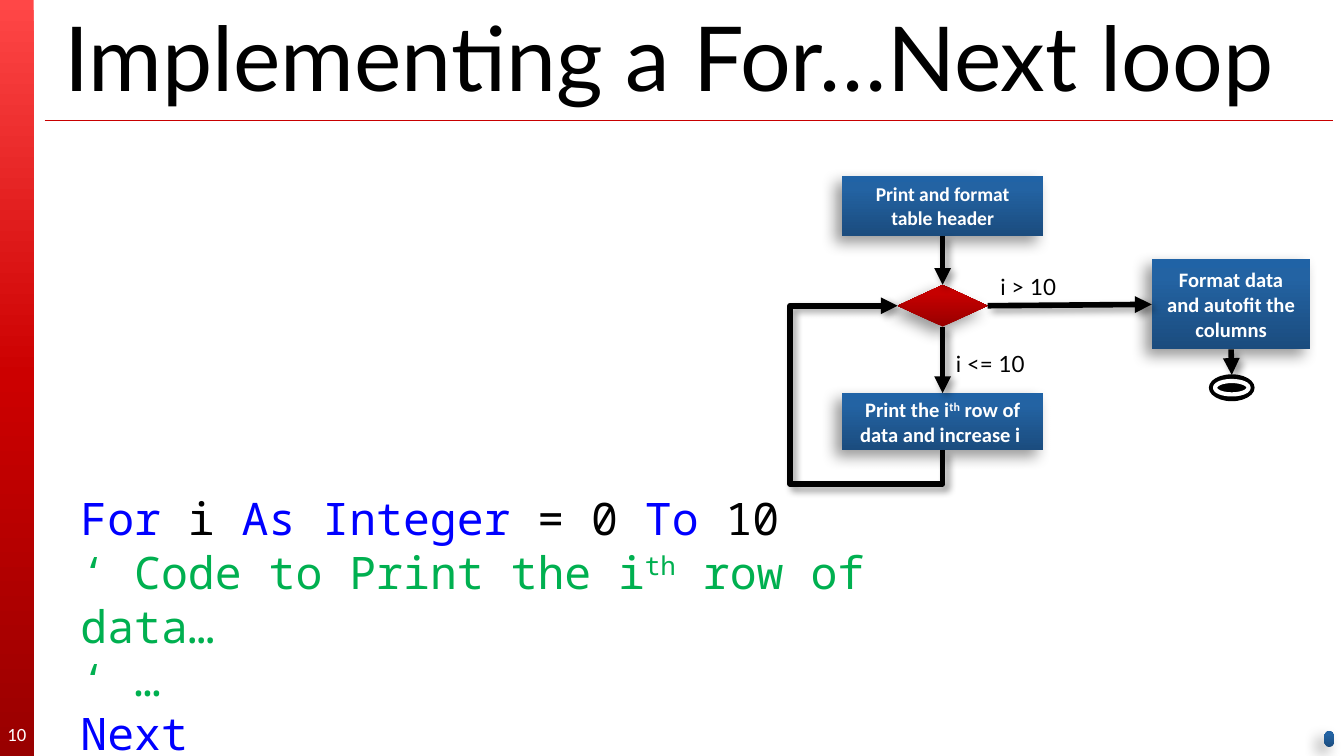
from copy import deepcopy
from lxml.etree import SubElement
from pptx import Presentation
from pptx.dml.color import RGBColor as RGB
from pptx.enum.shapes import MSO_CONNECTOR as LINK, MSO_SHAPE as KIND
from pptx.enum.text import MSO_ANCHOR as ANCHOR, PP_ALIGN as ALIGN
from pptx.oxml.ns import qn
from pptx.util import Inches, Pt

# Grid: 100 columns, 56.25 rows, one tenth of an inch each
UNIT = Inches(0.1)
COLORS = {"black": "000000", "white": "FFFFFF", "rule": "C80000",
          "key": "0000FF", "note": "00B050"}
RAMPS = {"bar": ((0, "FF4747"), (50, "CC0000"), (100, "990000")),
         "blue": ((0, "1B4C7E"), (80, "2363A3"), (100, "2063A6")),
         "red": ((0, "980000"), (80, "C60000"), (100, "C70000"))}
tint = {name: RGB.from_string(code) for name, code in COLORS.items()}

deck = Presentation()
deck.slide_width, deck.slide_height = int(100 * UNIT), int(56.25 * UNIT)
slide = deck.slides.add_slide(deck.slide_layouts[6])
shapes = slide.shapes


def draw(kind, box, ramp=None, angle=90, cast=True):
    """Add a borderless shape, with a gradient and a soft shadow if asked."""
    shape = shapes.add_shape(kind, *(int(n * UNIT) for n in box))
    shape.shadow.inherit = False
    shape.line.fill.background()
    if ramp:
        shape.fill.gradient()
        shape.fill.gradient_angle = angle
        stops = shape._element.spPr.find(".//" + qn("a:gsLst"))
        stops.append(deepcopy(stops[-1]))
        for stop, (place, code) in zip(shape.fill.gradient_stops, RAMPS[ramp]):
            stop.position = place / 100
            stop.color.rgb = RGB.from_string(code)
        if cast:
            shade(shape, 8, 5, 135)
    return shape


def shade(shape, blur, dist, angle):
    """Cast a black shadow at 40% opacity."""
    props = shape._element.spPr
    effects = props.find(qn("a:effectLst"))
    if effects is None:
        effects = SubElement(props, qn("a:effectLst"))
    outer = SubElement(effects, qn("a:outerShdw"), blurRad=str(Pt(blur)),
                       dist=str(Pt(dist)), dir=str(angle * 60000),
                       algn="ctr", rotWithShape="0")
    black = SubElement(outer, qn("a:srgbClr"), val=COLORS["black"])
    SubElement(black, qn("a:alpha"), val="40000")


# Side bar and title rule
draw(KIND.RECTANGLE, (0, 0, 2.5, 56.25), "bar", 270, cast=False)
rule = shapes.add_connector(LINK.STRAIGHT, *(int(n * UNIT) for n in (3.33, 8.98, 99.2, 8.98)))
rule.line.color.rgb = tint["rule"]
rule.line.width = Pt(0.75)
SubElement(rule._element.spPr, qn("a:effectLst"))

# Flowchart nodes
step = KIND.FLOWCHART_PROCESS
head = draw(step, (62.64, 13.1, 15, 4.45), "blue")
test = draw(KIND.FLOWCHART_DECISION, (66.79, 21.2, 6.7, 3.1), "red")
body = draw(step, (62.64, 29.25, 15, 4.25), "blue")
done = draw(step, (85.7, 19.3, 11.8, 6.7), "blue")
stop = draw(KIND.OVAL, (90, 27.9, 3.3, 1.9))
stop.fill.solid()
stop.fill.fore_color.rgb = tint["black"]
stop.line.color.rgb = tint["black"]
stop.line.width = Pt(0.75)
ring = draw(KIND.OVAL, (90.4, 28.35, 2.5, 1))
ring.fill.background()
ring.line.color.rgb = tint["white"]
ring.line.width = Pt(2.25)
draw(KIND.OVAL, (98.5, 54.4, 0.8, 1.2), "blue")

# Arrows: from, side, to, side
for start, out, goal, side in ((head, 2, test, 0), (test, 3, done, 1),
                               (test, 2, body, 0), (done, 2, stop, 0),
                               (body, 2, test, 1)):
    back = start is body
    link = shapes.add_connector(LINK.ELBOW if back else LINK.STRAIGHT, 0, 0, 0, 0)
    link.begin_connect(start, out)
    link.end_connect(goal, side)
    link.line.color.rgb = tint["black"]
    link.line.width = Pt(3)
    SubElement(link.line._get_or_add_ln(), qn("a:tailEnd"), type="triangle")
    shade(link, 4, 3, 45)
    if back:
        # The loop runs below the body and left of the test
        link.begin_x, link.end_x = int(73.84 * UNIT), int(63.09 * UNIT)
        link.begin_y, link.end_y = int(26.45 * UNIT), int(29.8 * UNIT)
        props = link._element.spPr
        frame = props.find(qn("a:xfrm"))
        frame.attrib.pop("flipV", None)
        frame.set("flipH", "1")
        frame.set("rot", "5400000")
        shape = props.find(qn("a:prstGeom"))
        shape.set("prst", "bentConnector4")
        bends = shape.find(qn("a:avLst"))
        for name, value in (("adj1", -23300), ("adj2", 339100)):
            SubElement(bends, qn("a:gd"), name=name, fmla=f"val {value}")

# Text boxes
title, page, low, high, code = (
    shapes.add_textbox(*(int(n * UNIT) for n in box)) for box in (
        (3.8, 1.5, 95.8, 5.3), (0, 53.15, 2.5, 3), (70.14, 25.6, 18.3, 3),
        (73.45, 19.8, 16.7, 3), (5, 36.03, 70.9, 17.2)))
for box in (title, page):
    box.text_frame.vertical_anchor = ANCHOR.MIDDLE
for box, gap in ((page, 0), (head, 1), (body, 1), (done, 1)):
    area = box.text_frame
    area.margin_left = area.margin_right = int(gap * UNIT)
    area.margin_top = area.margin_bottom = int(gap * UNIT)
    area.vertical_anchor = ANCHOR.MIDDLE

# Wording: box, font, size, lines of (text, colour); "th" is raised
program = [
    [("For", "key"), (" i ", "black"), ("As Integer", "key"),
     (" = 0 ", "black"), ("To", "key"), (" 10", "black")],
    [("‘ Code to Print the i", "note"), ("th", "note"), (" row of data…", "note")],
    [("‘ …", "note")],
    [("Next", "key")]]
row = [("Print the i", "white"), ("th", "white"),
       (" row of data and increase i ", "white")]
for box, font, size, lines in (
        (title, "Lato", 48, [[("Implementing a For…Next loop", "black")]]),
        (page, "Calibri", 10, [[("10", "white")]]),
        (low, "Lato", 12, [[("i <= 10", "black")]]),
        (high, "Lato", 12, [[("i > 10", "black")]]),
        (head, "Calibri", 10.5, [[("Print and format table header", "white")]]),
        (body, "Calibri", 11, [row]),
        (done, "Calibri", 11, [[("Format data and autofit the columns", "white")]]),
        (code, "Noto Sans Mono", 24, program)):
    area = box.text_frame
    area.word_wrap = True
    area.text = "\n".join("" for line in lines)
    for para, line in zip(area.paragraphs, lines):
        para.alignment = ALIGN.CENTER if font == "Calibri" else ALIGN.LEFT
        for text, color in line:
            run = para.add_run()
            run.text = text
            run.font.name = font
            run.font.size = Pt(size)
            run.font.bold = box in (head, body, done)
            run.font.color.rgb = tint[color]
            if text == "th":
                run.font._element.set("baseline", "30000")

deck.save("out.pptx")
